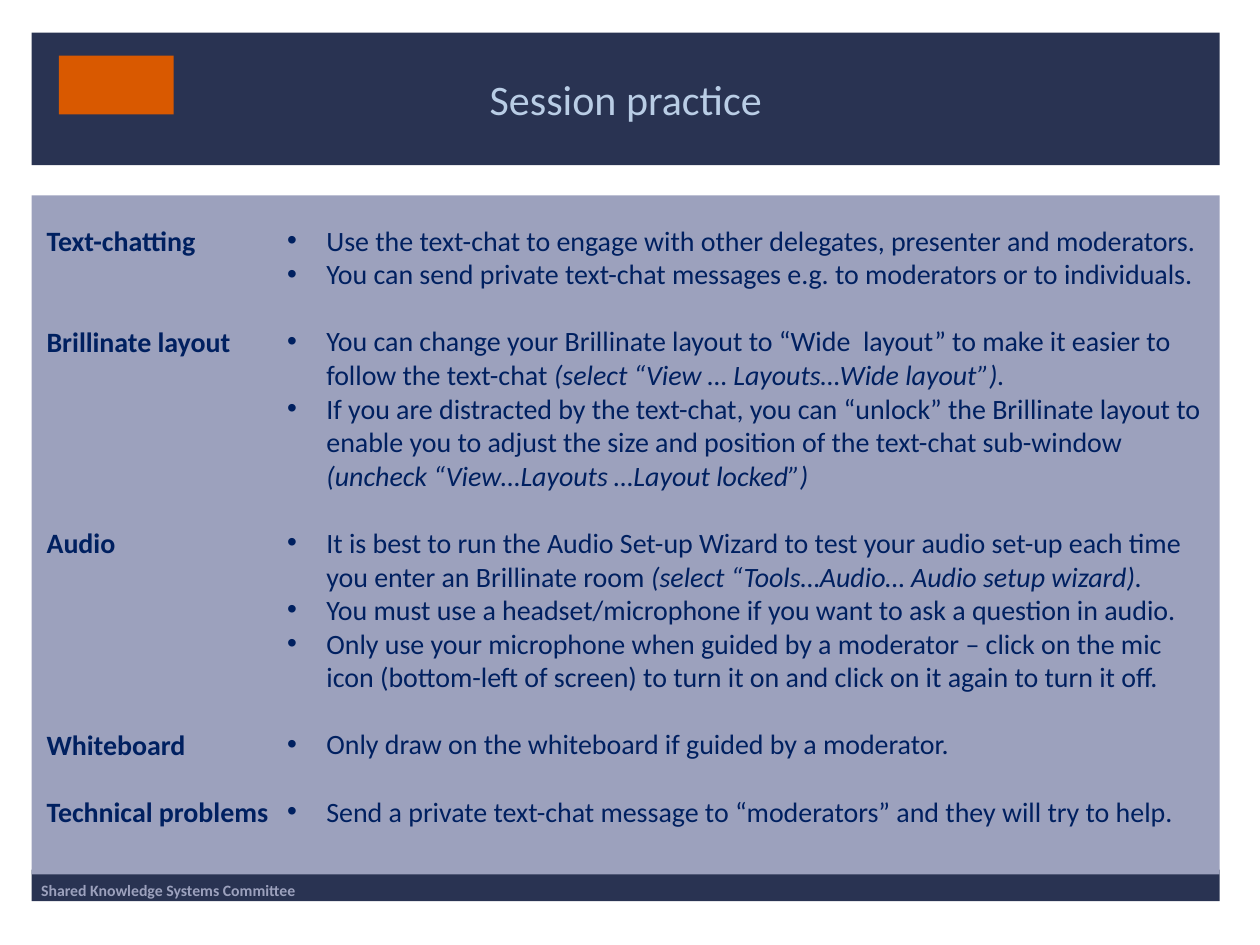
from lxml.etree import SubElement
from pptx import Presentation
from pptx.dml.color import RGBColor as RGB
from pptx.enum.shapes import MSO_SHAPE as Shape
from pptx.enum.text import MSO_ANCHOR as Anchor, MSO_AUTO_SIZE as AutoSize, PP_ALIGN as Align
from pptx.oxml.ns import qn
from pptx.util import Cm, Pt

NAVY = RGB(0x29, 0x33, 0x52)
LILAC = RGB(0x9C, 0xA1, 0xBD)
PALE_BLUE = RGB(0xB9, 0xCD, 0xE5)
INK = RGB(0x00, 0x20, 0x60)
ORANGE = RGB(0xD9, 0x59, 0x00)
FONT = "Calibri"
BODY_SIZE = 16
LINE = 19.2

# Each section holds its heading, its height in lines and (plain, italic) bullets.
SECTIONS = [
    ("Text-chatting", 2, [
        ("Use the text-chat to engage with other delegates, presenter and moderators.", ""),
        ("You can send private text-chat messages e.g. to moderators or to individuals.", ""),
    ]),
    ("Brillinate layout", 5, [
        ("You can change your Brillinate layout to “Wide  layout” to make it easier to "
         "follow the text-chat ", "(select “View … Layouts…Wide layout”)."),
        ("If you are distracted by the text-chat, you can “unlock” the Brillinate layout "
         "to enable you to adjust the size and position of the text-chat sub-window ",
         "(uncheck “View…Layouts …Layout locked”)"),
    ]),
    ("Audio", 5, [
        ("It is best to run the Audio Set-up Wizard to test your audio set-up each time "
         "you enter an Brillinate room ", "(select “Tools…Audio… Audio setup wizard)."),
        ("You must use a headset/microphone if you want to ask a question in audio.", ""),
        ("Only use your microphone when guided by a moderator – click on the mic icon "
         "(bottom-left of screen) to turn it on and click on it again to turn it off.", ""),
    ]),
    ("Whiteboard", 1, [("Only draw on the whiteboard if guided by a moderator.", "")]),
    ("Technical problems", 1, [
        ("Send a private text-chat message to “moderators” and they will try to help.", ""),
    ]),
]


def add_block(slide, x, y, w, h, color):
    """Add a plain filled rectangle."""
    sp = slide.shapes.add_shape(Shape.RECTANGLE, x, y, w, h)
    sp.shadow.inherit = False
    sp.fill.solid()
    sp.fill.fore_color.rgb = color
    sp.line.fill.background()


def style_run(r, size, color, bold=False, italic=False):
    """Format one run of text."""
    r.font.name = FONT
    r.font.size = Pt(size)
    r.font.color.rgb = color
    r.font.bold = bold
    r.font.italic = italic


def place(slide, ph, x, y, w, h, side):
    """Bring a placeholder to the front, set its box and return its text frame."""
    slide.shapes.element.append(ph.element)
    ph.left, ph.top, ph.width, ph.height = x, y, w, h
    tf = ph.text_frame
    tf.auto_size = AutoSize.NONE
    tf.word_wrap = True
    tf.margin_left = tf.margin_right = side
    tf.margin_top = tf.margin_bottom = Cm(0.13)
    return tf


def add_item(tf, first, texts, before, indent, bullet, bold=False):
    """Add a list paragraph of a plain and an italic run."""
    p = tf.paragraphs[0] if first else tf.add_paragraph()
    p.space_before = Pt(before)
    pPr = p._p.get_or_add_pPr()
    pPr.set("marL", str(indent))
    pPr.set("indent", str(-indent))
    if bullet:
        SubElement(pPr, qn("a:buFont"), typeface="Arial")
        SubElement(pPr, qn("a:buChar"), char="•")
    else:
        SubElement(pPr, qn("a:buNone"))
    for i, text in enumerate(texts):
        if text:
            r = p.add_run()
            r.text = text
            style_run(r, BODY_SIZE, INK, bold, italic=i == 1)


def add_header(slide, x, y, w, h):
    """Build the title band with its emblem block."""
    add_block(slide, x, y, w, h, NAVY)
    tf = place(slide, slide.shapes.title, x, y, w, h, Cm(0.25))
    tf.vertical_anchor = Anchor.MIDDLE
    tf.text = "Session practice"
    p = tf.paragraphs[0]
    p.alignment = Align.CENTER
    style_run(p.runs[0], 24, PALE_BLUE)
    add_block(slide, x + Cm(0.55), y + Cm(0.46), Cm(2.31), Cm(1.19), ORANGE)


def add_footer(slide, x, y, w, h):
    """Build the footer bar with the organisation name."""
    add_block(slide, x, y, w, h, NAVY)
    tf = slide.shapes.add_textbox(x - Cm(0.06), y + Cm(0.1), Cm(10.92), Cm(0.61)).text_frame
    tf.word_wrap = True
    tf.text = "Shared Knowledge Systems Committee"
    style_run(tf.paragraphs[0].runs[0], 9, LILAC, bold=True)


def add_content(slide, x, y, w, h):
    """Build the panel with headings on the left and bullets on the right."""
    add_block(slide, x, y, w, h, LILAC)
    top, height, side = y + Cm(0.43), Cm(12.57), Cm(0.1)
    heads = place(slide, slide.placeholders[1], x + Cm(0.2), top, Cm(5.46), height, side)
    items = place(slide, slide.placeholders[2], x + Cm(5.05), top, Cm(18.8), height, side)
    gap = 0
    for i, (head, lines, bullets) in enumerate(SECTIONS):
        add_item(heads, i == 0, [head], gap, 0, False, bold=True)
        for j, texts in enumerate(bullets):
            before = LINE if i and j == 0 else 0
            add_item(items, i == j == 0, texts, before, Cm(0.79), True)
        gap = lines * LINE


def main():
    """Build the slide and save it."""
    prs = Presentation()
    prs.slide_width, prs.slide_height = Cm(25.4), Cm(19.05)
    slide = prs.slides.add_slide(prs.slide_layouts[3])
    x, w = Cm(0.64), Cm(23.95)
    add_footer(slide, x, Cm(17.53), w, Cm(0.64))
    add_header(slide, x, Cm(0.66), w, Cm(2.67))
    add_content(slide, x, Cm(3.94), w, Cm(13.69))
    prs.save("out.pptx")


if __name__ == "__main__":
    main()
